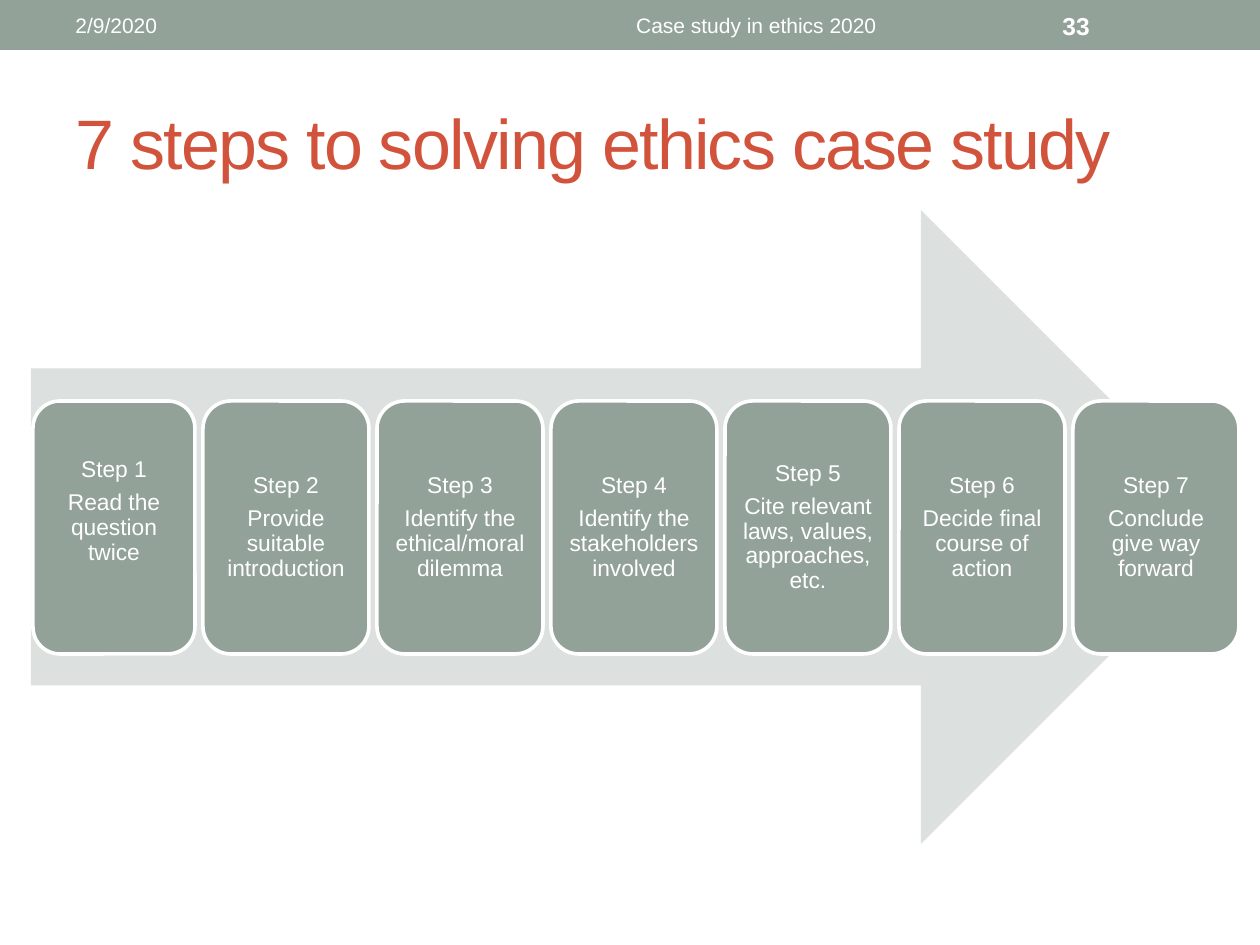
from pptx import Presentation
from pptx.dml.color import RGBColor as Rgb
from pptx.enum.shapes import MSO_SHAPE as Form
from pptx.enum.text import MSO_ANCHOR as Anchor, PP_ALIGN as Align
from pptx.util import Emu, Pt

SCALE = 914400 / 126
FONT = "Arial"
HUES = {"sage": "93A299", "pale": "DCE0DE", "rust": "D2533C", "white": "FFFFFF"}
STEPS = [
    "Read the question twice",
    "Provide suitable introduction",
    "Identify the ethical/moral dilemma",
    "Identify the stakeholders involved",
    "Cite relevant laws, values, approaches, etc.",
    "Decide final course of action",
    "Conclude give way forward",
]


def px(count):
    return Emu(round(count * SCALE))


def hue(name):
    return Rgb.from_string(HUES[name])


def style(para, size, color, align=Align.LEFT, bold=False):
    para.alignment = align
    font = para.font
    font.name, font.size, font.bold = FONT, Pt(size), bold
    font.color.rgb = hue(color)


def add_form(slide, form, box, fill):
    shape = slide.shapes.add_shape(form, *map(px, box))
    shape.shadow.inherit = False
    shape.fill.solid()
    shape.fill.fore_color.rgb = hue(fill)
    shape.line.fill.background()
    return shape


def add_label(slide, box, text, size, color="white", align=Align.LEFT, bold=False):
    frame = slide.shapes.add_textbox(*map(px, box)).text_frame
    frame.word_wrap = True
    frame.vertical_anchor = Anchor.MIDDLE
    para = frame.paragraphs[0]
    para.text = text
    style(para, size, color, align, bold)
    return para


def add_step(slide, box, number, text, lift):
    card = add_form(slide, Form.ROUNDED_RECTANGLE, box, "sage")
    card.line.color.rgb = hue("white")
    card.line.width = Pt(2.08)
    frame = card.text_frame
    frame.word_wrap = True
    frame.vertical_anchor = Anchor.MIDDLE
    frame.margin_left = frame.margin_right = frame.margin_top = px(6)
    frame.margin_bottom = px(6 + lift)
    frame.text = f"Step {number}\n{text}"
    for para in frame.paragraphs:
        style(para, 13, "white", Align.CENTER)
        para.line_spacing = 0.9
        para.space_after = Pt(5)


def main():
    deck = Presentation()
    deck.slide_width, deck.slide_height = px(1260), px(945)
    slide = deck.slides.add_slide(deck.slide_layouts[6])

    add_form(slide, Form.RECTANGLE, (0, 0, 1260, 50), "sage")
    title = add_label(slide, (63, 73, 1134, 136),
                      "7 steps to solving ethics case study", 40, "rust")
    title.runs[0]._r.get_or_add_rPr().set("spc", "-100")

    add_form(slide, Form.RIGHT_ARROW, (31, 210, 1207, 634), "pale")
    right, pitch, wide = 1239, 174, 166
    for number, text in enumerate(STEPS, 1):
        left = right - wide - pitch * (len(STEPS) - number)
        first = number == 1
        trim = 4 if first else 0
        box = (left + trim, 401, wide - trim, 253)
        add_step(slide, box, number, text, 32 if first else 0)

    add_label(slide, (63, 3, 399, 45), "2/9/2020", 12)
    add_label(slide, (473, 3, 567, 45), "Case study in ethics 2020", 12,
              align=Align.CENTER)
    add_label(slide, (1050, 3, 147, 45), "33", 14, bold=True)
    deck.save("out.pptx")


if __name__ == "__main__":
    main()
